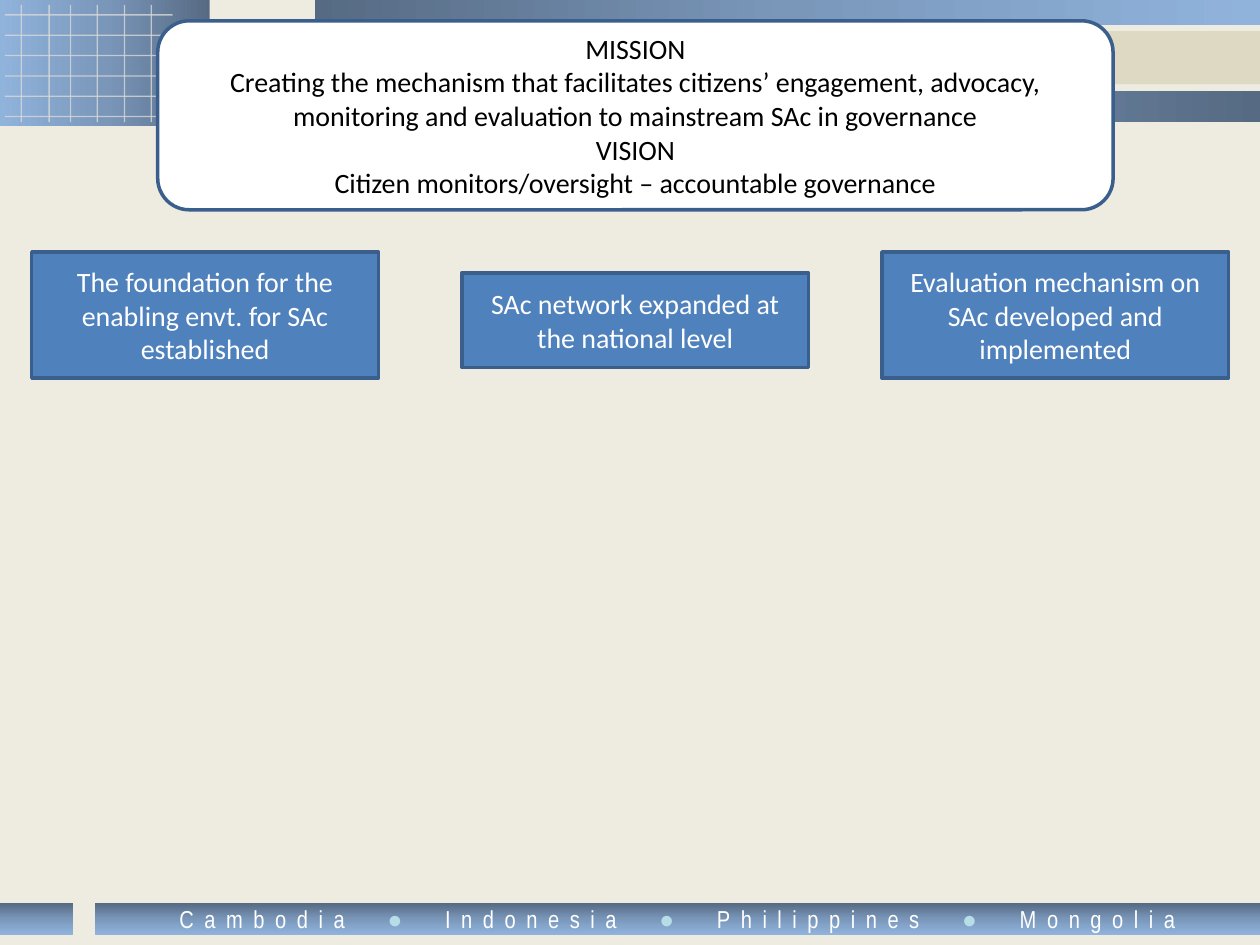
"""Build the mission and vision slide with its three outcome boxes."""
from copy import deepcopy

from lxml.etree import SubElement
from pptx import Presentation
from pptx.dml.color import RGBColor
from pptx.enum.shapes import MSO_CONNECTOR, MSO_SHAPE
from pptx.enum.text import MSO_ANCHOR, PP_ALIGN
from pptx.oxml.ns import qn
from pptx.util import Cm, Pt

CREAM = RGBColor(0xEE, 0xEC, 0xE1)
SAND = RGBColor(0xDD, 0xD9, 0xC3)
GRID_GREY = RGBColor(0xD9, 0xD9, 0xD9)
SLATE = RGBColor(0x56, 0x6A, 0x83)
STEEL = RGBColor(0x7A, 0x97, 0xBA)
SKY = RGBColor(0x90, 0xB3, 0xDC)
BLUE = RGBColor(0x4F, 0x81, 0xBD)
NAVY = RGBColor(0x3A, 0x5F, 0x8C)
AQUA = RGBColor(0xB7, 0xDE, 0xE8)
WHITE = RGBColor(0xFF, 0xFF, 0xFF)
BLACK = RGBColor(0x00, 0x00, 0x00)


def add_box(area, fill=None, angle=0, outline=None, preset=MSO_SHAPE.RECTANGLE):
    """Add a box with a plain fill, or the slate-to-sky gradient if none is given."""
    box = slide.shapes.add_shape(preset, *[Cm(length) for length in area])
    box.shadow.inherit = False
    if fill is None:
        box.fill.gradient()
        stop_list = box._element.spPr.find(qn("a:gradFill")).find(qn("a:gsLst"))
        stop_list.insert(1, deepcopy(stop_list[0]))
        for stop, position, color in zip(box.fill.gradient_stops, (0, 0.5, 1), (SLATE, STEEL, SKY)):
            stop.position = position
            stop.color.rgb = color
        box.fill.gradient_angle = angle
    else:
        box.fill.solid()
        box.fill.fore_color.rgb = fill
    if outline is None:
        box.line.fill.background()
    else:
        box.line.color.rgb = outline
        box.line.width = Pt(2)
    box.text_frame.word_wrap = True
    box.text_frame.vertical_anchor = MSO_ANCHOR.MIDDLE
    box.text_frame.paragraphs[0].alignment = PP_ALIGN.CENTER
    return box


def add_span(para, text, color, font="Calibri", size=16):
    """Add one formatted run to a paragraph."""
    span = para.add_run()
    span.text = text
    span.font.name = font
    span.font.size = Pt(size)
    span.font.color.rgb = color
    return span


deck = Presentation()
deck.slide_width, deck.slide_height = Cm(25.4), Cm(19.05)
page = deck.slides.add_slide(deck.slide_layouts[6])
slide = page
page.background.fill.solid()
page.background.fill.fore_color.rgb = CREAM

add_box((0, 0, 4.23, 2.54), angle=180)
add_box((6.35, 0, 19.05, 0.51), angle=0)
add_box((6.35, 1.83, 19.05, 0.63), angle=180)
add_box((6.35, 0.63, 19.05, 1.07), SAND)

grid_lines = [(0.1, 0.3 + 0.41 * row, 3.48, 0.3 + 0.41 * row) for row in range(6)]
grid_lines += [(x, 2.46, x, 0.1) for x in (0.43, 0.99, 1.42, 1.96, 2.51, 3.05)]
grid = page.shapes.add_group_shape()
for ends in grid_lines:
    line = grid.shapes.add_connector(MSO_CONNECTOR.STRAIGHT, *[Cm(length) for length in ends])
    line.line.color.rgb = GRID_GREY
    line.line.width = Pt(0.75)
    properties = line._element.spPr
    SubElement(next(properties.iter(qn("a:srgbClr"))), qn("a:alpha"), val="80000")
    SubElement(properties, qn("a:effectLst"))

footer = add_box((1.91, 18.21, 23.49, 0.63), angle=270)
para = footer.text_frame.paragraphs[0]
for index, country in enumerate(("Cambodia", "Indonesia", "Philippines", "Mongolia")):
    if index:
        dot = add_span(para, " ●", AQUA, "Arial Narrow", 14)
        dot.font._element.set("spc", "1520")
        country = " " + country
    name = add_span(para, country, WHITE, "Arial Narrow", 14)
    name.font._element.set("spc", "600")
add_box((0, 18.21, 1.47, 0.63), angle=270)

mission = add_box((3.18, 0.42, 19.26, 3.81), WHITE, outline=NAVY, preset=MSO_SHAPE.ROUNDED_RECTANGLE)
statements = (
    "MISSION",
    "Creating the mechanism that facilitates citizens’ engagement, advocacy, "
    "monitoring and evaluation to mainstream SAc in governance",
    "VISION",
    "Citizen monitors/oversight – accountable governance",
)
for index, statement in enumerate(statements):
    frame = mission.text_frame
    para = frame.add_paragraph() if index else frame.paragraphs[0]
    para.alignment = PP_ALIGN.CENTER
    add_span(para, statement, BLACK)

outcomes = (
    (9.31, 5.5, 1.91, "SAc network expanded at the national level"),
    (0.64, 5.08, 2.54, "The foundation for the enabling envt. for SAc established"),
    (17.78, 5.08, 2.54, "Evaluation mechanism on SAc developed and implemented"),
)
for left, top, height, text in outcomes:
    box = add_box((left, top, 6.99, height), BLUE, outline=NAVY)
    add_span(box.text_frame.paragraphs[0], text, WHITE)

deck.save("out.pptx")
